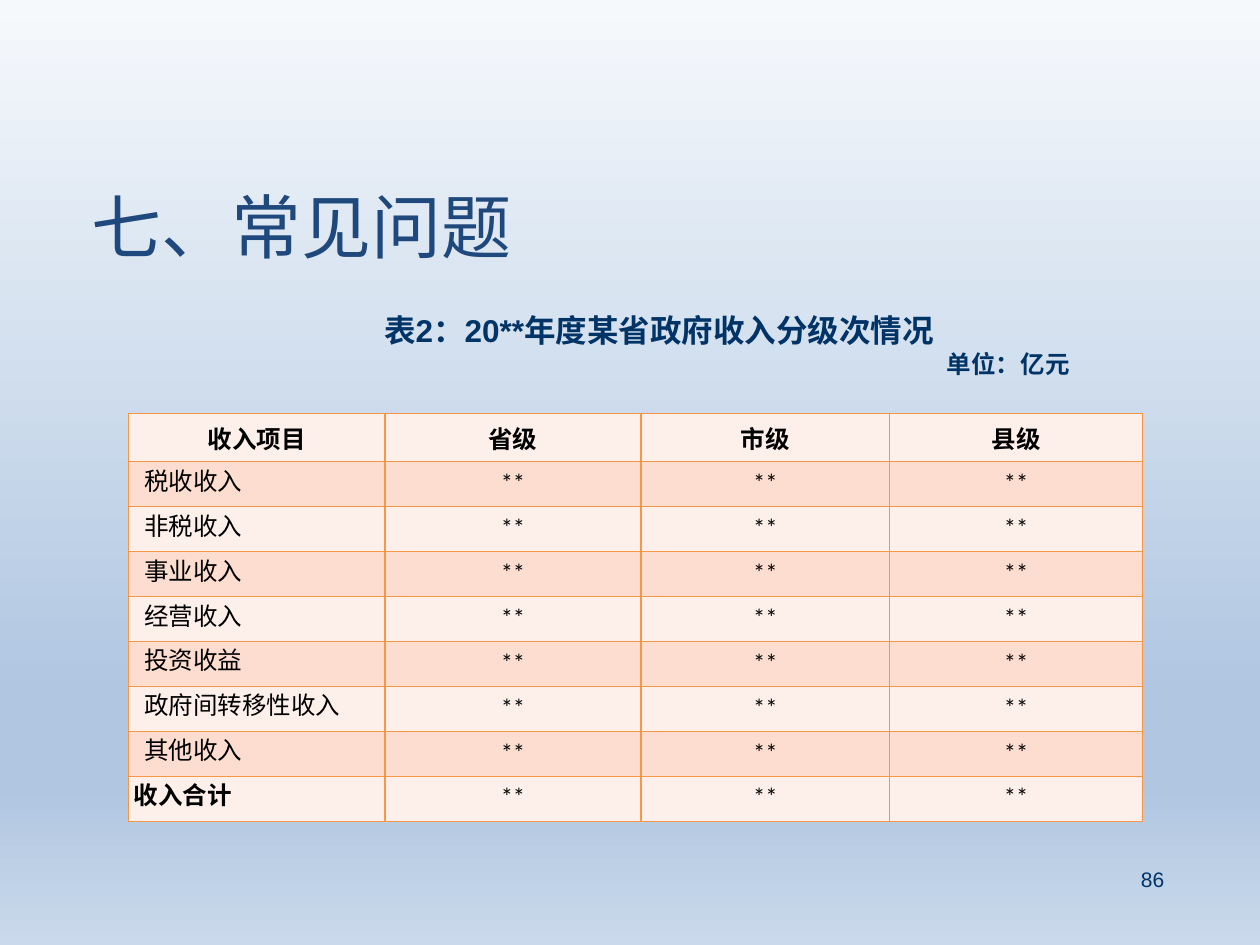
import pptx
import pptx.dml.color
import pptx.enum.text
import pptx.oxml
import pptx.oxml.ns
import pptx.util

Pt = pptx.util.Pt
qn = pptx.oxml.ns.qn
ALIGN = pptx.enum.text.PP_ALIGN
ANCHOR = pptx.enum.text.MSO_ANCHOR

NAVY, TITLE_BLUE, ORANGE, BLACK = "003366", "1F497D", "F79646", "000000"
LIGHT_ROW, DARK_ROW = "FDEFE9", "FCDDCF"
SKY = [(0, "F6F9FC"), (74, "B0C6E1"), (83, "B0C6E1"), (100, "CAD9EB")]

LEVELS = ["省级", "市级", "县级"]
INCOMES = ["税收收入", "非税收入", "事业收入", "经营收入",
           "投资收益", "政府间转移性收入", "其他收入"]
TOTAL = "收入合计"


def color(hex_string):
    return pptx.dml.color.RGBColor.from_string(hex_string)


def style(paragraph, text, size, hex_string, font="Arial", bold=False, align=ALIGN.LEFT):
    paragraph.text = text
    paragraph.alignment = align
    paragraph.font.size = Pt(size)
    paragraph.font.name = font
    paragraph.font.bold = bold
    paragraph.font.color.rgb = color(hex_string)


def add_frame(slide, box):
    frame = slide.shapes.add_textbox(*map(Pt, box)).text_frame
    frame.word_wrap = True
    return frame


def paint_background(slide):
    slide.background.fill.gradient()
    stops = next(slide.element.iter(qn("a:gsLst")))
    for stop in list(stops):
        stops.remove(stop)
    for percent, hex_string in SKY:
        stop = stops.makeelement(qn("a:gs"), {"pos": str(percent * 1000)})
        stop.append(stop.makeelement(qn("a:srgbClr"), {"val": hex_string}))
        stops.append(stop)
    next(slide.element.iter(qn("a:lin"))).set("ang", "5400000")


def add_title(slide, box):
    frame = add_frame(slide, box)
    # The heading sits on the lower line of its box
    frame.margin_top, frame.margin_bottom = Pt(51), 0
    style(frame.paragraphs[0], "七、常见问题", 40, TITLE_BLUE)


def add_caption(slide, box):
    frame = add_frame(slide, box)
    style(frame.paragraphs[0], "表2：20**年度某省政府收入分级次情况", 18, NAVY,
          bold=True, align=ALIGN.CENTER)
    style(frame.add_paragraph(), "单位：亿元", 14, NAVY, bold=True, align=ALIGN.RIGHT)


def add_page_number(slide, box):
    style(add_frame(slide, box).paragraphs[0], "86", 12, NAVY, align=ALIGN.RIGHT)


def add_borders(cell):
    properties = cell._tc.get_or_add_tcPr()
    for index, side in enumerate(("lnL", "lnR", "lnT", "lnB")):
        properties.insert(index, pptx.oxml.parse_xml(
            f'<a:{side} {pptx.oxml.ns.nsdecls("a")} w="12700"><a:solidFill>'
            f'<a:srgbClr val="{ORANGE}"/></a:solidFill></a:{side}>'))


def style_income_name(cell, text):
    cell.vertical_anchor = ANCHOR.MIDDLE
    cell.margin_left = cell.margin_right = cell.margin_top = cell.margin_bottom = Pt(3)
    name = cell.text_frame.paragraphs[0]
    is_total = text == TOTAL
    style(name, text, 14, BLACK, "Calibri", bold=is_total)
    name.line_spacing = Pt(15)
    if not is_total:
        name._p.get_or_add_pPr().set("marL", str(Pt(6)))


def add_income_table(slide, box):
    rows = [["收入项目"] + LEVELS]
    rows += [[income] + ["**"] * len(LEVELS) for income in INCOMES + [TOTAL]]
    table = slide.shapes.add_table(len(rows), len(rows[0]), *map(Pt, box)).table
    table.first_row = table.horz_banding = False
    for column, width in zip(table.columns, (146.5, 146.5, 142, 144.6)):
        column.width = Pt(width)
    for r, texts in enumerate(rows):
        table.rows[r].height = Pt(box[3] / len(rows))
        for c, text in enumerate(texts):
            cell = table.cell(r, c)
            cell.fill.solid()
            cell.fill.fore_color.rgb = color(DARK_ROW if r % 2 else LIGHT_ROW)
            add_borders(cell)
            if r and c == 0:
                style_income_name(cell, text)
            else:
                font = "Arial" if r == 0 and c else "Calibri"
                style(cell.text_frame.paragraphs[0], text, 14, BLACK, font,
                      bold=r == 0, align=ALIGN.CENTER)


def main():
    deck = pptx.Presentation()
    deck.slide_width, deck.slide_height = Pt(720), Pt(540)
    slide = deck.slides.add_slide(deck.slide_layouts[6])
    paint_background(slide)
    add_income_table(slide, (73.4, 236.2, 579.6, 231.3))
    add_caption(slide, (134.6, 174.2, 483.8, 46.1))
    add_page_number(slide, (516.2, 491.8, 156.2, 37.4))
    add_title(slide, (45.4, 55.4, 630, 95.8))
    deck.save("out.pptx")


if __name__ == "__main__":
    main()
